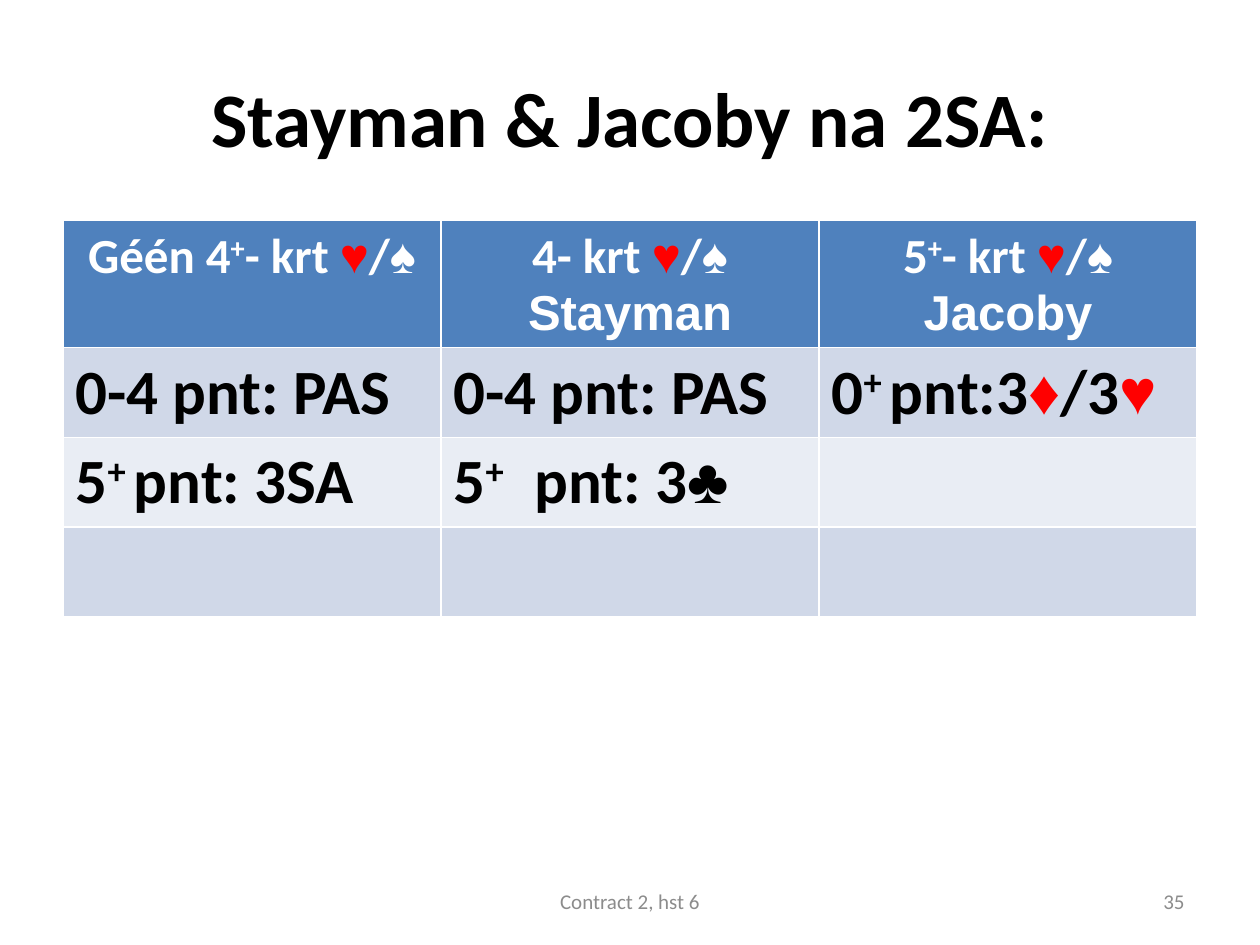
from dataclasses import dataclass
from typing import NamedTuple

from pptx import Presentation
from pptx.dml.color import RGBColor
from pptx.enum.text import MSO_ANCHOR as Anchor, PP_ALIGN as Align
from pptx.util import Pt


@dataclass(frozen=True)
class Theme:
    text_font: str = "Calibri"
    suit_font: str = "Arial"
    black: str = "000000"
    white: str = "FFFFFF"
    red: str = "FF0000"
    grey: str = "8C8C8C"
    header_fill: str = "4F81BD"
    band_fills: tuple[str, str] = ("D0D8E8", "E9EDF4")
    title_size: int = 44
    header_size: int = 28
    body_size: int = 36
    footer_size: int = 12


THEME = Theme()


class Piece(NamedTuple):
    text: str
    font: str = THEME.text_font
    color: str | None = None
    superscript: bool = False
    spacing: int = 0


class Box(NamedTuple):
    left: float
    top: float
    width: float
    height: float


class Footer(NamedTuple):
    text: str
    box: Box
    alignment: Align


Line = list[Piece]


def suit(symbol: str) -> Piece:
    return Piece(symbol, THEME.suit_font, THEME.red if symbol in "♥♦" else None)


def plus(text: str = "+") -> Piece:
    return Piece(text, superscript=True)


MAJORS = [suit("♥"), Piece("/"), suit("♠")]
PASS = [Piece("0-4 pnt: PAS")]
WIDE_SPACE = Piece(" ", superscript=True, spacing=13)

HEADERS: list[list[Line]] = [
    [[Piece("Géén 4"), plus(), Piece("- krt "), *MAJORS]],
    [[Piece("4- krt "), *MAJORS], [Piece("Stayman", THEME.suit_font)]],
    [[Piece("5"), plus(), Piece("- krt "), *MAJORS], [Piece("Jacoby", THEME.suit_font)]],
]
BODY: list[list[Line]] = [
    [PASS, PASS, [Piece("0"), plus("+ "), Piece("pnt:3"), suit("♦"), Piece("/3"), suit("♥")]],
    [
        [Piece("5"), plus("+ "), Piece("pnt: 3SA")],
        [Piece("5"), plus(), WIDE_SPACE, Piece("pnt: 3"), suit("♣")],
        [],
    ],
    [[], [], []],
]
TITLE_BOX = Box(36, 21.6, 648, 90)
TABLE_BOX = Box(36, 126, 648, 225.3)
HEADER_HEIGHT = 72
FOOTERS = [
    Footer("35", Box(516, 500.5, 168, 28.75), Align.RIGHT),
    Footer("Contract 2, hst 6", Box(246, 500.5, 228, 28.75), Align.CENTER),
]


def format_run(run, size: float, color: str, font: str = THEME.text_font, bold: bool = True) -> None:
    run.font.name = font
    run.font.size = Pt(size)
    run.font.bold = bold
    run.font.color.rgb = RGBColor.from_string(color)


def place(shape, box: Box) -> None:
    shape.left, shape.top, shape.width, shape.height = map(Pt, box)


def fill_cell(cell, lines: list[Line], fill: str, size: float, color: str, alignment: Align) -> None:
    cell.fill.solid()
    cell.fill.fore_color.rgb = RGBColor.from_string(fill)
    for index, line in enumerate(lines):
        frame = cell.text_frame
        paragraph = frame.add_paragraph() if index else frame.paragraphs[0]
        paragraph.alignment = alignment
        for piece in line:
            run = paragraph.add_run()
            run.text = piece.text
            format_run(run, size, piece.color or color, piece.font)
            properties = run.font._element
            if piece.superscript:
                properties.set("baseline", "30000")
            if piece.spacing:
                properties.set("spc", str(piece.spacing * 100))


def add_title(slide, text: str) -> None:
    title = slide.shapes.title
    place(title, TITLE_BOX)
    frame = title.text_frame
    frame.text = text
    frame.vertical_anchor = Anchor.MIDDLE
    frame.paragraphs[0].alignment = Align.CENTER
    format_run(frame.paragraphs[0].runs[0], THEME.title_size, THEME.black)


def add_bidding_table(slide) -> None:
    table = slide.shapes.add_table(len(BODY) + 1, len(HEADERS), *map(Pt, TABLE_BOX)).table
    table.rows[0].height = Pt(HEADER_HEIGHT)
    for column, lines in enumerate(HEADERS):
        fill_cell(table.cell(0, column), lines, THEME.header_fill,
                  THEME.header_size, THEME.white, Align.CENTER)
    for row, lines in enumerate(BODY, start=1):
        table.rows[row].height = Pt((TABLE_BOX.height - HEADER_HEIGHT) / len(BODY))
        for column, line in enumerate(lines):
            fill_cell(table.cell(row, column), [line], THEME.band_fills[(row - 1) % 2],
                      THEME.body_size, THEME.black, Align.LEFT)


def add_footer(slide, footer: Footer) -> None:
    frame = slide.shapes.add_textbox(*map(Pt, footer.box)).text_frame
    frame.word_wrap = True
    frame.vertical_anchor = Anchor.MIDDLE
    frame.text = footer.text
    paragraph = frame.paragraphs[0]
    paragraph.alignment = footer.alignment
    format_run(paragraph.runs[0], THEME.footer_size, THEME.grey, bold=False)


def main() -> None:
    presentation = Presentation()
    presentation.slide_width, presentation.slide_height = Pt(720), Pt(540)
    title_only = presentation.slide_layouts[5]
    slide = presentation.slides.add_slide(title_only)
    add_title(slide, "Stayman & Jacoby na 2SA:")
    add_bidding_table(slide)
    for footer in FOOTERS:
        add_footer(slide, footer)
    presentation.save("out.pptx")


if __name__ == "__main__":
    main()
